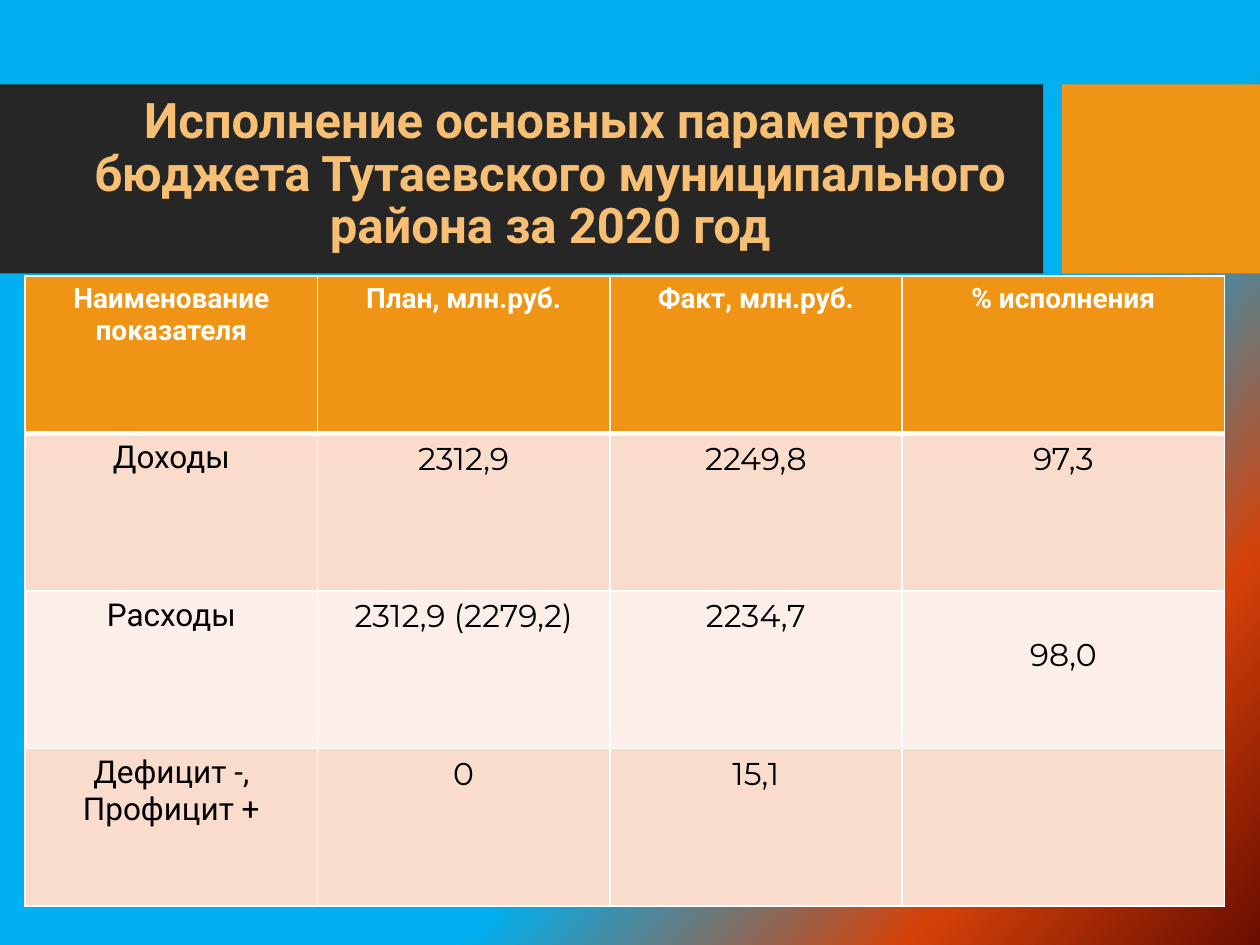
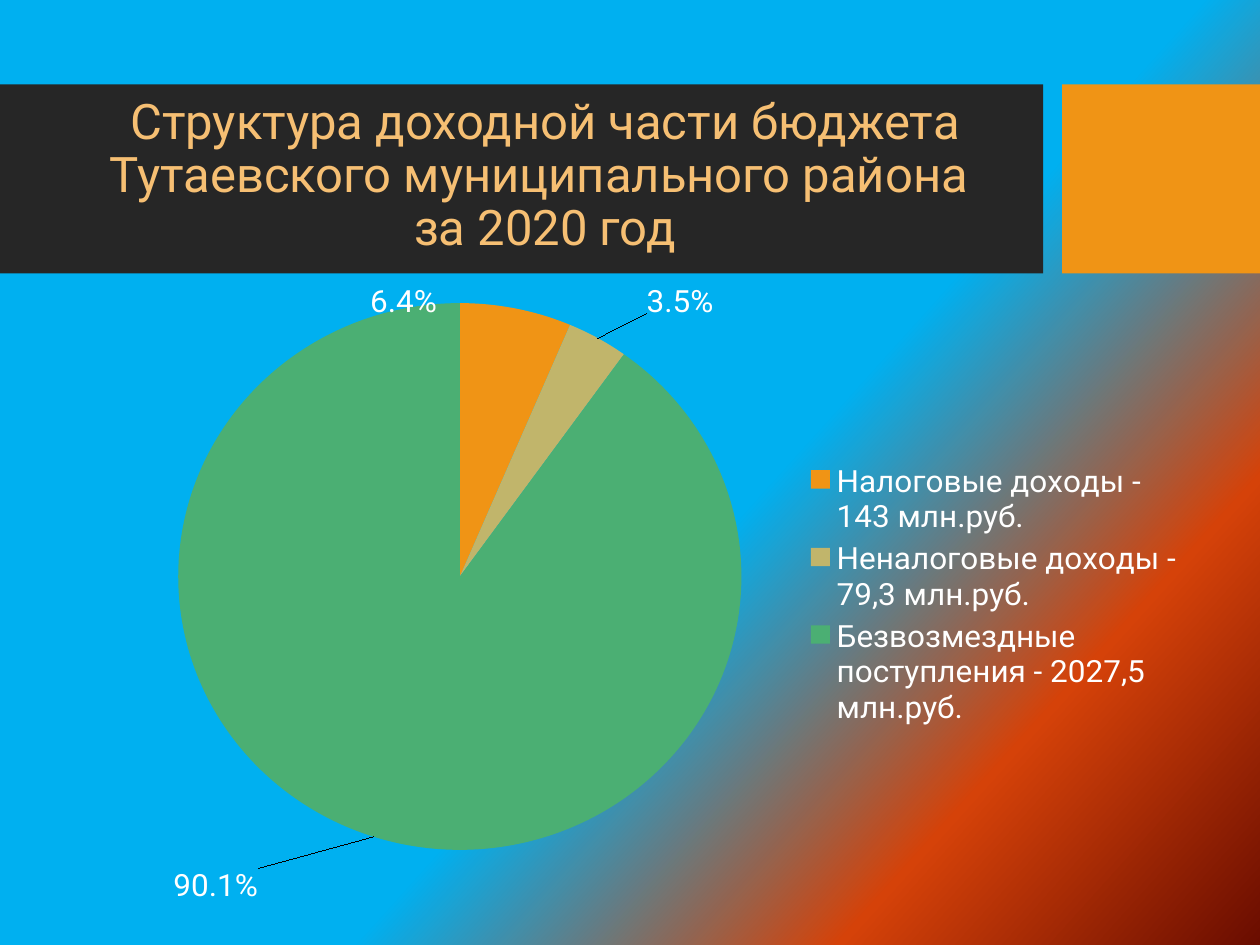
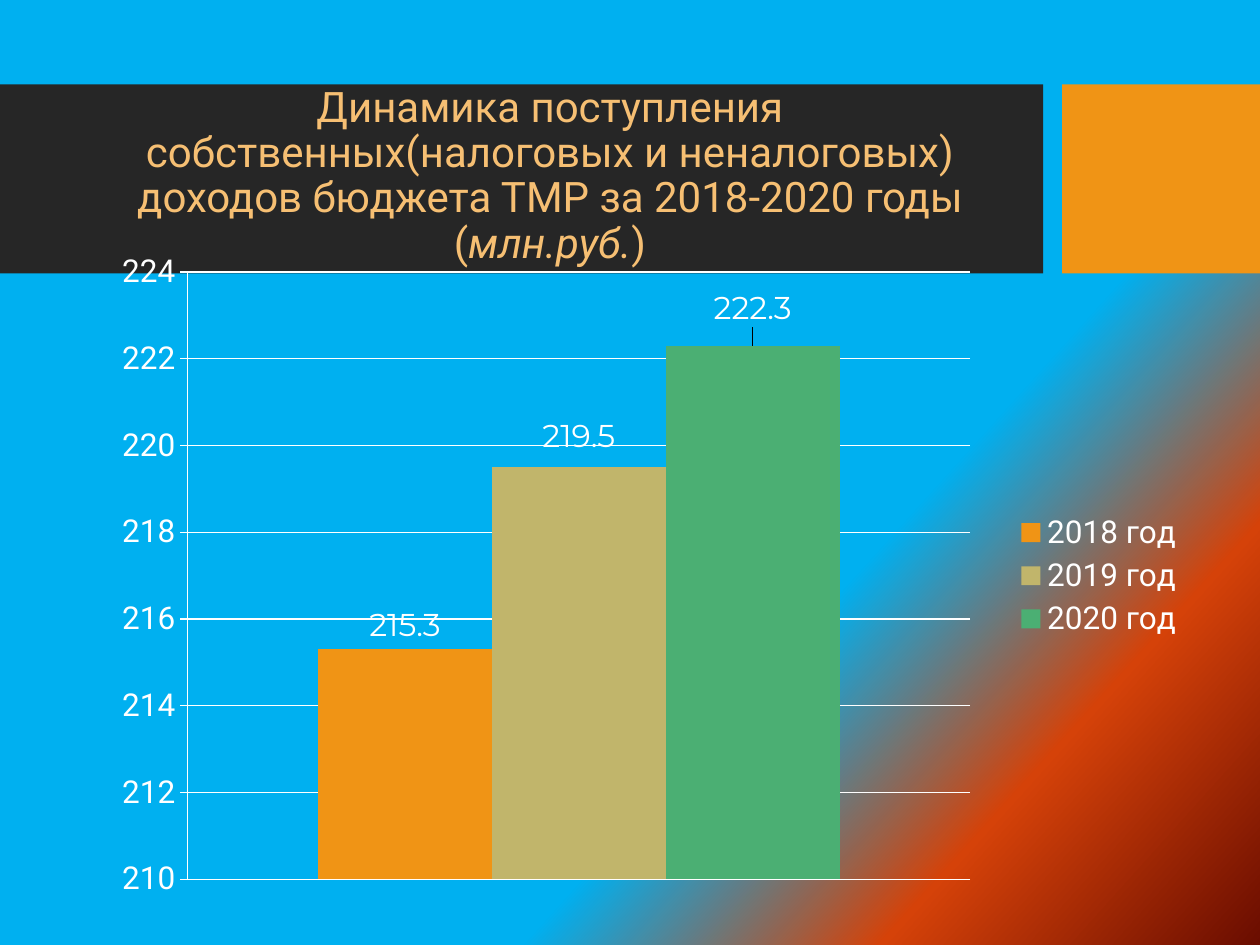
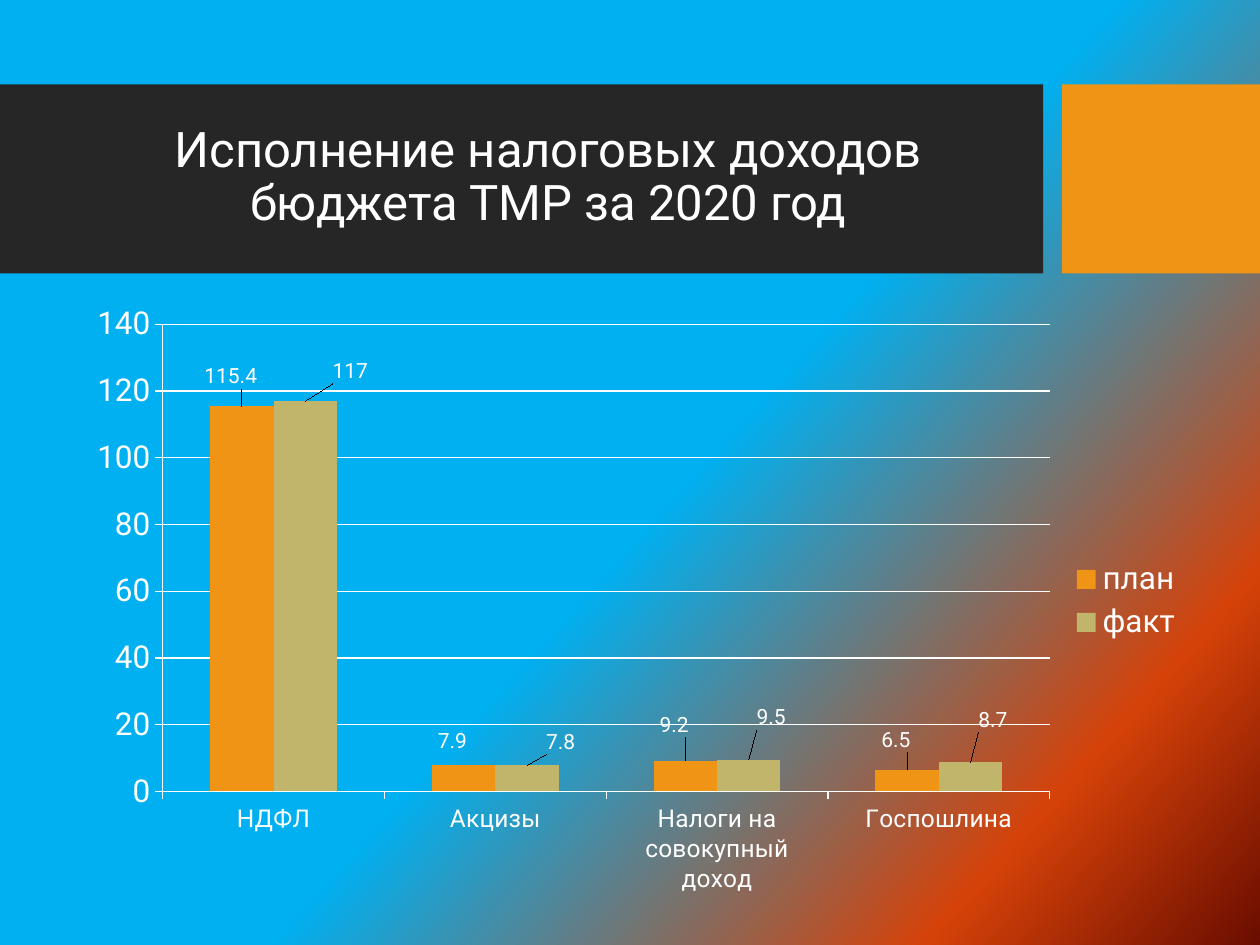
from copy import deepcopy

from lxml import etree
from pptx import Presentation
from pptx.chart.data import CategoryChartData
from pptx.dml.color import RGBColor
from pptx.enum import chart as ch, shapes, text
from pptx.oxml.ns import qn
from pptx.util import Inches, Pt

WHITE = RGBColor(0xFF, 0xFF, 0xFF)
BLACK = RGBColor(0x00, 0x00, 0x00)
DARK = RGBColor(0x26, 0x26, 0x26)
GOLD = RGBColor(0xF6, 0xBF, 0x73)
ORANGE = RGBColor(0xF0, 0x94, 0x15)
SAND = RGBColor(0xC1, 0xB5, 0x6B)
GREEN = RGBColor(0x4B, 0xAF, 0x73)
PEACH = RGBColor(0xF9, 0xDC, 0xCC)
PALE = RGBColor(0xFC, 0xEE, 0xE8)
SKY = RGBColor(0x00, 0xB0, 0xF0)
RUST = RGBColor(0xD5, 0x42, 0x09)
WINE = RGBColor(0x6A, 0x0D, 0x00)

SERIES = [ORANGE, SAND, GREEN]
BODY = "Roboto"
DIGITS = "Montserrat"


def style(font, size, color=WHITE, name=BODY, bold=False):
    font.size, font.name, font.bold = Pt(size), name, bold
    font.color.rgb = color


def place(parent, index, mode=None, **sizes):
    """Insert a manual chart layout given as fractions of the chart."""
    for old in parent.findall(qn("c:layout")):
        parent.remove(old)
    layout = etree.Element(qn("c:layout"))
    manual = etree.SubElement(layout, qn("c:manualLayout"))
    if mode:
        etree.SubElement(manual, qn("c:layoutTarget"), val=mode)
        for key in ("xMode", "yMode"):
            etree.SubElement(manual, qn("c:" + key), val="edge")
    for key, size in sizes.items():
        etree.SubElement(manual, qn("c:" + key), val=str(size))
    parent.insert(index, layout)


class Deck:
    def __init__(self):
        self.prs = Presentation()
        self.prs.slide_width, self.prs.slide_height = Inches(10), Inches(7.5)
        self.layout = self.prs.slide_layouts[5]
        for holder in list(self.layout.placeholders):
            if holder.placeholder_format.idx:
                holder.element.getparent().remove(holder.element)
        self.page = None

    def slide(self, blue, rust):
        self.page = self.prs.slides.add_slide(self.layout)
        if len(self.prs.slides) == 1:
            self.bands()
        # Diagonal background gradient
        fill = self.page.background.fill
        fill.gradient()
        first = fill.gradient_stops[0]._gs
        first.getparent().append(deepcopy(first))
        marks = ((blue, SKY), (rust, RUST), (1, WINE))
        for stop, (pos, color) in zip(fill.gradient_stops, marks):
            stop.position, stop.color.rgb = pos, color
        fill.gradient_angle = 360 - 42

    def bands(self):
        """Put the title band and the side block on the shared layout."""
        blocks = [self.rect(0, 8.28, DARK), self.rect(8.43, 1.57, ORANGE)]
        for block in blocks:
            self.layout.shapes._spTree.insert(2, block.element)

    def rect(self, left, width, color):
        box = self.page.shapes.add_shape(
            shapes.MSO_SHAPE.RECTANGLE, Inches(left), Inches(0.67),
            Inches(width), Inches(1.5))
        box.shadow.inherit = False
        box.fill.solid()
        box.fill.fore_color.rgb = color
        box.line.fill.background()
        return box

    def title(self, words, at, size=28, color=GOLD, bold=False):
        """Fill the title; words is a string or a list of (text, italic)."""
        box = self.page.shapes.title
        box.left, box.top, box.width, box.height = map(Inches, at)
        frame = box.text_frame
        frame.word_wrap = True
        frame.auto_size = text.MSO_AUTO_SIZE.NONE
        frame.vertical_anchor = text.MSO_ANCHOR.MIDDLE
        para = frame.paragraphs[0]
        if isinstance(words, str):
            para.text = words
        else:
            for part, slant in words:
                run = para.add_run()
                run.text, run.font.italic = part, slant
        para.alignment = text.PP_ALIGN.CENTER
        para.line_spacing = 0.9
        style(para.font, size, color, bold=bold)

    def border(self, cell, base):
        props = cell._tc.get_or_add_tcPr()
        for side in "LRTB":
            width = base if side == "B" else 1
            line = etree.SubElement(props, qn("a:ln" + side), w=str(Pt(width)))
            fill = etree.SubElement(line, qn("a:solidFill"))
            etree.SubElement(fill, qn("a:srgbClr"), val=str(WHITE))

    def table(self, rows, at, widths, height):
        frame = self.page.shapes.add_table(
            len(rows), len(widths), *map(Inches, at))
        grid = frame.table
        for col, width in zip(grid.columns, widths):
            col.width = Inches(width)
        for r, row in enumerate(rows):
            grid.rows[r].height = Inches(height)
            for c, words in enumerate(row):
                cell = grid.cell(r, c)
                self.border(cell, 1 if r else 3)
                cell.fill.solid()
                cell.fill.fore_color.rgb = (
                    ORANGE if r == 0 else PEACH if r % 2 else PALE)
                cell.margin_left = cell.margin_right = Inches(0.11)
                cell.margin_top = cell.margin_bottom = Inches(0.05)
                if not words:
                    continue
                cell.text = words
                for para in cell.text_frame.paragraphs:
                    para.alignment = text.PP_ALIGN.CENTER
                    if r == 0:
                        style(para.font, 16, bold=True)
                    else:
                        style(para.font, 18, BLACK, DIGITS if c else BODY)
        return grid

    def chart(self, kind, at, cats, series, plot, fmt="General"):
        data = CategoryChartData(number_format=fmt)
        data.categories = cats
        for name, vals in series:
            data.add_series(name, vals)
        chart = self.page.shapes.add_chart(kind, *map(Inches, at), data).chart
        style(chart.font, 18)
        chart.has_title = False
        chart.has_legend = True
        chart.legend.position = ch.XL_LEGEND_POSITION.RIGHT
        chart.legend.include_in_layout = False
        area = chart._chartSpace.chart.plotArea
        place(area, 0, "inner", **dict(zip("xywh", plot)))
        return chart

    def labels(self, series, shifts, size=18, name=BODY, fmt="General"):
        """Show values, each moved by its shift from the outside end."""
        marks = series.data_labels
        marks.show_value = True
        marks.number_format, marks.number_format_is_linked = fmt, False
        marks.position = ch.XL_LABEL_POSITION.OUTSIDE_END
        style(marks.font, size, name=name)
        for i, (x, y) in enumerate(shifts):
            if not (x or y):
                continue
            mark = series.points[i].data_label
            style(mark.font, size, name=name)
            mark.position = ch.XL_LABEL_POSITION.OUTSIDE_END
            place(mark._get_or_add_dLbl(), 1, x=x, y=y)

    def pie(self, at, cats, vals, plot, shifts):
        fmt = "0.0%"
        chart = self.chart(ch.XL_CHART_TYPE.PIE, at, cats,
                           [("Series 1", vals)], plot, fmt)
        chart.plots[0].vary_by_categories = True
        series = chart.plots[0].series[0]
        for i, color in enumerate(SERIES):
            fill = series.points[i].format.fill
            fill.solid()
            fill.fore_color.rgb = color
        self.labels(series, shifts, fmt=fmt)

    def bars(self, at, cats, series, plot, span, shifts, **look):
        chart = self.chart(ch.XL_CHART_TYPE.COLUMN_CLUSTERED, at, cats,
                           series, plot)
        chart.plots[0].vary_by_categories = False
        chart.plots[0].gap_width = 150
        for item, color, moves in zip(chart.plots[0].series, SERIES, shifts):
            item.format.fill.solid()
            item.format.fill.fore_color.rgb = color
            self.labels(item, moves, **look)
        # Axes and grid
        axis = chart.value_axis
        axis.minimum_scale, axis.maximum_scale, axis.major_unit = span
        axis.has_major_gridlines = True
        for line in (axis.format.line, axis.major_gridlines.format.line,
                     chart.category_axis.format.line):
            line.color.rgb, line.width = WHITE, Pt(0.75)
        for each in (axis, chart.category_axis):
            each.major_tick_mark = ch.XL_TICK_MARK.OUTSIDE
        style(axis.tick_labels.font, 18)
        style(chart.category_axis.tick_labels.font, 14)
        return chart


def main():
    deck = Deck()

    # Budget totals
    deck.slide(0.62, 0.83)
    deck.title("Исполнение основных параметров бюджета Тутаевского "
               "муниципального района за 2020 год",
               (0.5, 0.84, 7.73, 1.1), bold=True)
    grid = deck.table([
        ("Наименование показателя", "План, млн.руб.", "Факт, млн.руб.",
         "% исполнения"),
        ("Доходы", "2312,9", "2249,8", "97,3"),
        ("Расходы", "2312,9 (2279,2)", "2234,7", "98,0"),
        ("Дефицит -,\nПрофицит +", "0", "15,1", ""),
    ], (0.2, 2.19, 9.53, 5), (2.32, 2.32, 2.32, 2.56), 1.25)
    grid.cell(2, 3).margin_top = Inches(0.36)

    # Income structure
    deck.slide(0.57, 0.8)
    deck.title("Структура доходной части бюджета Тутаевского "
               "муниципального района \vза 2020 год",
               (0.5, 0.7, 7.65, 1.41))
    deck.pie((0.5, 2.11, 9, 5.08),
             ["Налоговые доходы - 143 млн.руб.",
              "Неналоговые доходы - 79,3 млн.руб.",
              "Безвозмездные поступления - 2027,5 млн.руб."],
             (0.064, 0.035, 0.901), (0.05, 0.03, 0.6, 0.88),
             [(-0.13, 0.03), (0.04, -0.03), (-0.1, 0.04)])

    # Own income by year
    deck.slide(0.65, 0.82)
    deck.title([("Динамика поступления собственных(налоговых и неналоговых) "
                 "доходов бюджета ТМР за 2018-2020 годы (", False),
                ("млн.руб.", True), (")", False)],
               (0.5, 0.84, 7.73, 1.12), size=24)
    chart = deck.bars((0.5, 1.95, 9, 5.24), ["1"],
                      [("2018 год", [215.3]), ("2019 год", [219.5]),
                       ("2020 год", [222.3])],
                      (0.11, 0.04, 0.69, 0.92), (210, 224, 2),
                      [[(0, 0)], [(0, -0.01)], [(0, -0.02)]], name=DIGITS)
    chart.category_axis.visible = False

    # Tax income, plan and fact
    deck.slide(0.53, 0.84)
    deck.title("Исполнение налоговых доходов бюджета ТМР за 2020 год",
               (0.58, 0.82, 7.54, 1.18), color=WHITE)
    deck.bars((0.58, 2.33, 8.91, 4.88),
              ["НДФЛ", "Акцизы", "Налоги на совокупный доход", "Госпошлина"],
              [("план", [115.4, 7.9, 9.2, 6.5]),
               ("факт", [117, 7.8, 9.5, 8.7])],
              (0.08, 0.05, 0.79, 0.76), (0, 140, 20),
              [[(-0.01, -0.02), (-0.01, -0.01), (-0.01, -0.03), (-0.01, -0.02)],
               [(0.04, -0.02), (0.03, -0.01), (0.02, -0.04), (0.02, -0.04)]],
              size=12)

    deck.prs.save("out.pptx")


if __name__ == "__main__":
    main()
